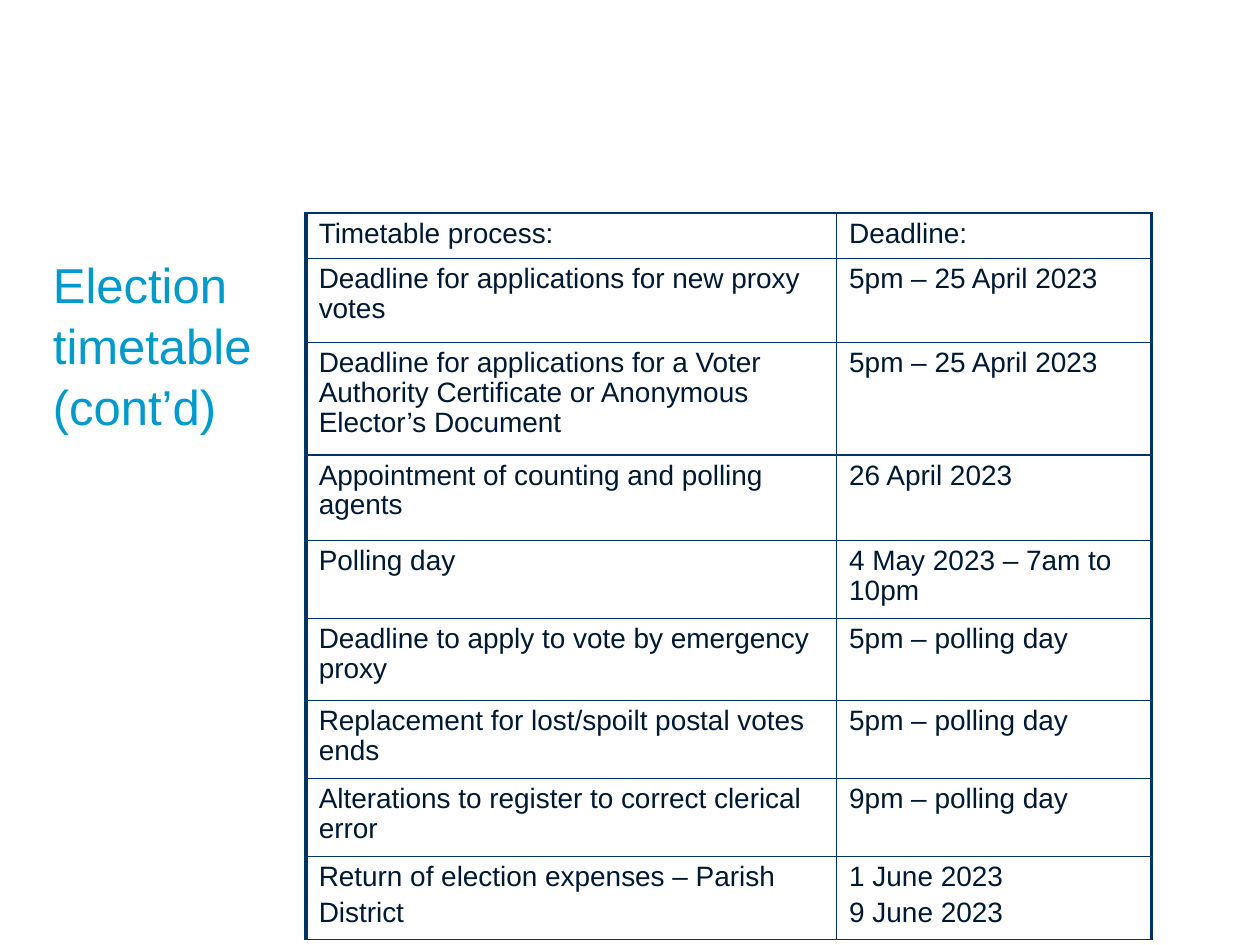
from dataclasses import dataclass

from lxml import etree
from pptx import Presentation
from pptx import util as u
from pptx.dml.color import RGBColor
from pptx.enum import text
from pptx.oxml.ns import qn


@dataclass(frozen=True)
class Theme:
    font: str = "Arial"
    title: str = "0099CC"
    body: str = "001933"
    border: str = "003366"
    title_size: float = 28
    body_size: float = 16
    title_spacing: float = 1.04
    body_spacing: float = 0.96
    thin: float = 1
    thick: float = 2.25


@dataclass(frozen=True)
class Entry:
    process: str
    deadline: str
    height: float


THEME = Theme()
COLUMNS = (4.21, 2.5)
ENTRIES = (
    Entry("Timetable process:", "Deadline:", 0.36),
    Entry("Deadline for applications for new proxy votes", "5pm – 25 April 2023", 0.67),
    Entry("Deadline for applications for a Voter Authority Certificate or "
          "Anonymous Elector’s Document", "5pm – 25 April 2023", 0.89),
    Entry("Appointment of counting and polling agents", "26 April 2023", 0.68),
    Entry("Polling day", "4 May 2023 – 7am to 10pm", 0.62),
    Entry("Deadline to apply to vote by emergency proxy", "5pm – polling day", 0.65),
    Entry("Replacement for lost/spoilt postal votes ends", "5pm – polling day", 0.62),
    Entry("Alterations to register to correct clerical error", "9pm – polling day", 0.62),
    Entry("Return of election expenses – Parish\nDistrict", "1 June 2023\n9 June 2023", 0.63),
)


def write(tf, content: str, size: float, color: str, spacing: float) -> None:
    for i, line in enumerate(content.split("\n")):
        p = tf.add_paragraph() if i else tf.paragraphs[0]
        p.alignment = text.PP_ALIGN.LEFT
        p.line_spacing = spacing
        p.space_before = u.Pt(0.2 * size if i else 0)
        r = p.add_run()
        r.text = line
        r.font.name = THEME.font
        r.font.size = u.Pt(size)
        r.font.bold = False
        r.font.color.rgb = RGBColor.from_string(color)


def add_title(s, content: str) -> None:
    sp = s.shapes.add_textbox(u.Inches(0.42), u.Inches(2), u.Inches(2.75), u.Inches(4.67))
    tf = sp.text_frame
    tf.word_wrap = True
    tf.margin_left = tf.margin_top = tf.margin_right = tf.margin_bottom = 0
    write(tf, content, THEME.title_size, THEME.title, THEME.title_spacing)


def set_borders(cell, left: float, right: float) -> None:
    widths = {"a:lnL": left, "a:lnR": right, "a:lnT": THEME.thin, "a:lnB": THEME.thin}
    tc_pr = cell._tc.get_or_add_tcPr()
    for i, (tag, width) in enumerate(widths.items()):
        ln = etree.Element(qn(tag), w=str(u.Pt(width)))
        fill = etree.SubElement(ln, qn("a:solidFill"))
        etree.SubElement(fill, qn("a:srgbClr"), val=THEME.border)
        tc_pr.insert(i, ln)


def add_timetable(s, entries: tuple[Entry, ...]) -> None:
    height = sum(e.height for e in entries)
    table = s.shapes.add_table(len(entries), len(COLUMNS), u.Inches(2.43), u.Inches(1.69),
                               u.Inches(sum(COLUMNS)), u.Inches(height)).table
    table.first_row = table.horz_banding = False
    for column, width in zip(table.columns, COLUMNS):
        column.width = u.Inches(width)
    for row, entry in zip(table.rows, entries):
        row.height = u.Inches(entry.height)
        process, deadline = row.cells
        for cell, content in ((process, entry.process), (deadline, entry.deadline)):
            cell.fill.background()
            cell.margin_left = cell.margin_right = u.Inches(0.1)
            cell.margin_top = cell.margin_bottom = u.Inches(0.05)
            write(cell.text_frame, content, THEME.body_size, THEME.body, THEME.body_spacing)
        set_borders(process, THEME.thick, THEME.thin)
        set_borders(deadline, THEME.thin, THEME.thick)


def main() -> None:
    prs = Presentation()
    prs.slide_width, prs.slide_height = u.Inches(10), u.Inches(7.5)
    s = prs.slides.add_slide(prs.slide_layouts[6])
    add_title(s, "Election timetable (cont’d)")
    add_timetable(s, ENTRIES)
    prs.save("out.pptx")


if __name__ == "__main__":
    main()
